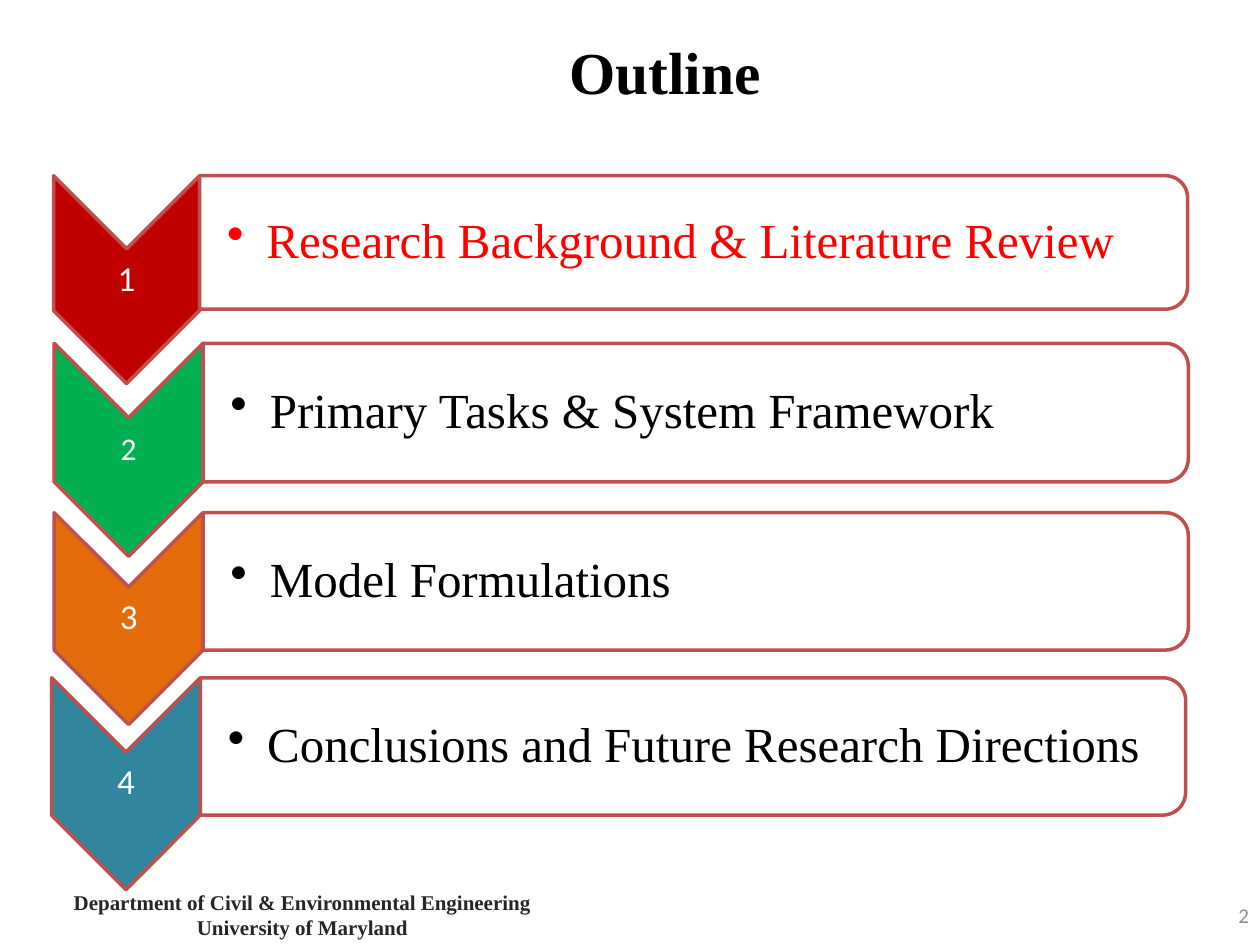
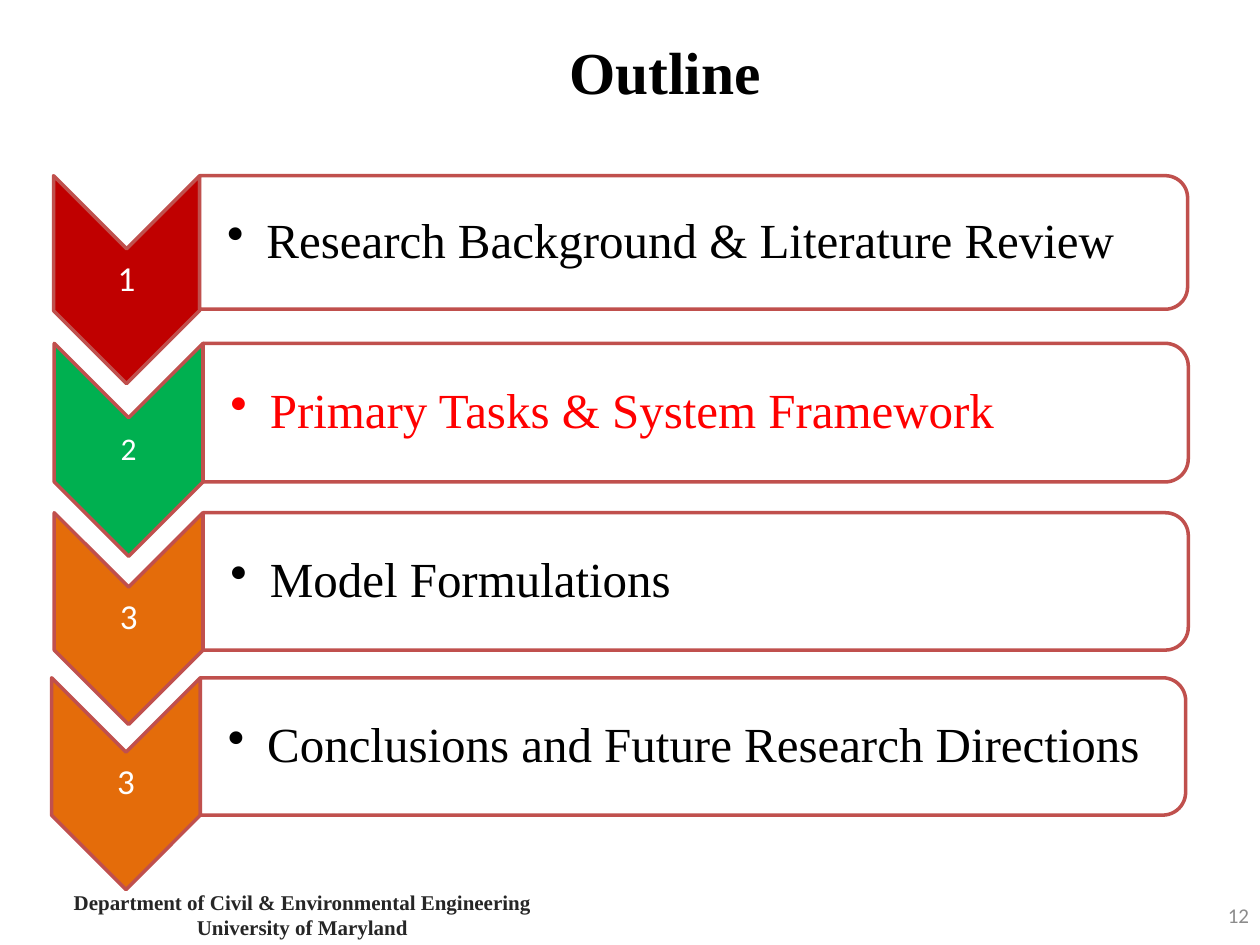
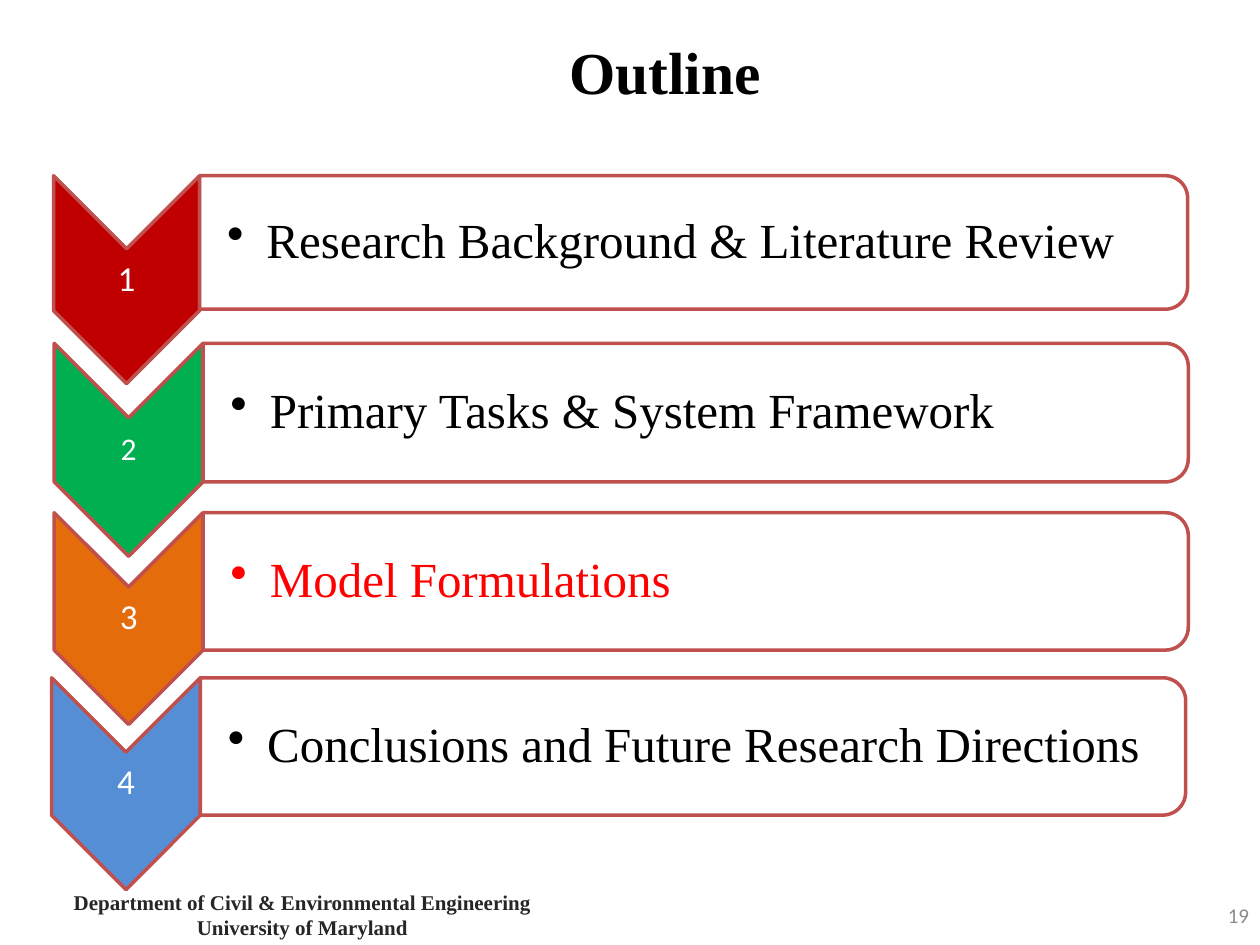
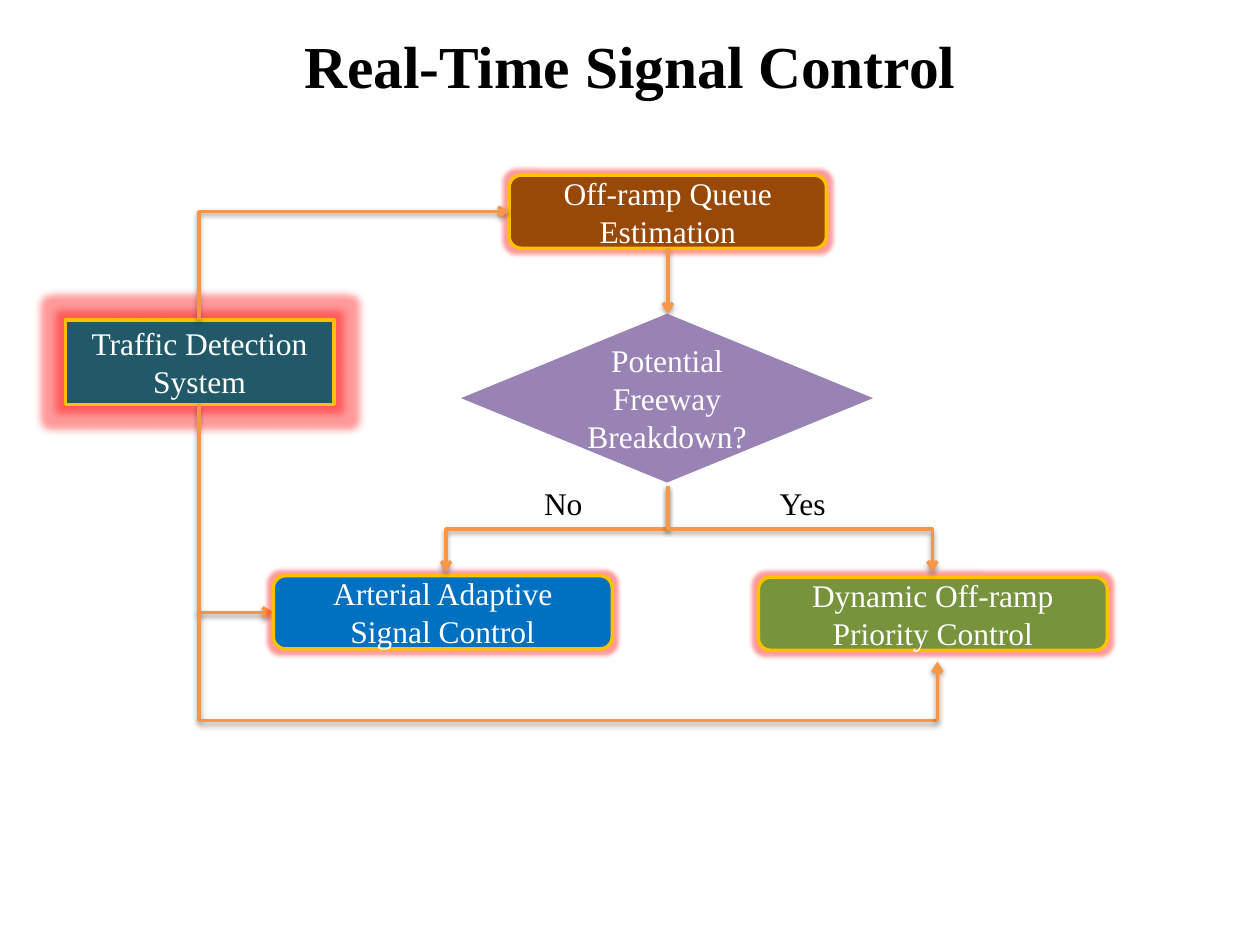
from collections import namedtuple

from lxml import etree
from pptx import Presentation
from pptx.dml.color import RGBColor
from pptx.enum.shapes import MSO_CONNECTOR as LINK, MSO_SHAPE as SHAPE
from pptx.enum.text import MSO_ANCHOR as ANCHOR, PP_ALIGN as ALIGN
from pptx.oxml.ns import qn
from pptx.util import Pt

COLORS = {
    "black": "000000", "white": "FFFFFF", "active": "FF0000",
    "footer": "262626", "number": "8C8C8C", "outline": "C0504D",
    "red": "C00000", "green": "00B050", "orange": "E46C0A",
    "teal": "31859C", "sky": "558ED5",
    "brown": "984807", "petrol": "215968", "purple": "8064A2",
    "blue": "0070C0", "olive": "77933C", "gold": "FFC000", "arrow": "F79646",
}
SERIF, SANS = "Times New Roman", "Calibri"

TITLE = {"name": SERIF, "size": Pt(34), "bold": True}
FOOTER = {"name": SERIF, "size": Pt(12), "bold": True}
PAGE_NUMBER = {"name": SANS, "size": Pt(12)}
TOPIC = {"name": SERIF, "size": Pt(28)}
FLOW = {"name": SERIF, "size": Pt(18)}

TOPICS = [
    "Research Background & Literature Review",
    "Primary Tasks & System Framework",
    "Model Formulations",
    "Conclusions and Future Research Directions",
]
Row = namedtuple("Row", "left top chevron_w chevron_h panel_w panel_h number_size")
ROWS = [
    Row(30.6, 100.4, 83.5, 118.8, 564.5, 76.3, 20),
    Row(31, 196.2, 85, 121.7, 563, 79.2, 18),
    Row(31, 293, 85, 121, 563, 78.5, 20),
    Row(29.5, 387.3, 85, 121, 563, 78.5, 20),
]
# Page number, highlighted topic, badge of the last row and its colour
OUTLINES = [(2, 0, "4", "teal"), (12, 1, "3", "orange"), (19, 2, "4", "sky")]


def rgb(color):
    return RGBColor.from_string(COLORS[color])


def apply(target, formats):
    for name, value in formats.items():
        setattr(target, name, value)


def add_xml(parent, tag, **attributes):
    return etree.SubElement(parent, qn(tag), {k: str(v) for k, v in attributes.items()})


def write(shape, text, font, color, align=ALIGN.CENTER, insets=(7.2, 3.6, 7.2, 3.6),
          spacing=None, bullet_indent=None, wrap=True, anchor=ANCHOR.MIDDLE):
    frame = shape.text_frame
    sides = ("margin_left", "margin_top", "margin_right", "margin_bottom")
    apply(frame, dict(zip(sides, map(Pt, insets))))
    apply(frame, {"word_wrap": wrap, "vertical_anchor": anchor, "text": text})
    for paragraph in frame.paragraphs:
        apply(paragraph, {"alignment": align, "line_spacing": spacing})
        if bullet_indent:
            properties = paragraph._p.get_or_add_pPr()
            properties.set("marL", str(Pt(bullet_indent)))
            properties.set("indent", str(-Pt(bullet_indent)))
            add_xml(properties, "a:buChar", char="•")
        apply(paragraph.font, font)
        paragraph.font.color.rgb = rgb(color)


def add_label(slide, box, text, font, color="black", **layout):
    write(slide.shapes.add_textbox(*map(Pt, box)), text, font, color, **layout)


def add_block(slide, kind, box, fill, line=None, opacity=100):
    block = slide.shapes.add_shape(kind, *map(Pt, box))
    block.shadow.inherit = False
    block.fill.solid()
    block.fill.fore_color.rgb = rgb(fill)
    if opacity < 100:
        fill_color = block._element.spPr.find(qn("a:solidFill"))[0]
        add_xml(fill_color, "a:alpha", val=opacity * 1000)
    if line:
        block.line.color.rgb = rgb(line)
        block.line.width = Pt(2)
    else:
        block.line.fill.background()
    return block


def add_turned_block(slide, kind, box, fill, opacity=100):
    """Add a block turned by 90 degrees that covers the given box."""
    left, top, width, height = box
    shift = (width - height) / 2
    block = add_block(slide, kind, (left + shift, top - shift, height, width),
                      fill, "outline", opacity)
    block.rotation = 90


def add_topic_row(slide, row, badge, badge_fill, topic, topic_color):
    add_turned_block(slide, SHAPE.CHEVRON,
                     (row.left, row.top, row.chevron_w, row.chevron_h), badge_fill)
    add_label(slide, (row.left, row.top + row.chevron_w / 2,
                      row.chevron_w, row.chevron_h - row.chevron_w),
              badge, {"name": SANS, "size": Pt(row.number_size)}, "white",
              insets=(0.9,) * 4, spacing=0.9)
    panel_left = row.left + row.chevron_w
    add_turned_block(slide, SHAPE.ROUND_2_SAME_RECTANGLE,
                     (panel_left, row.top, row.panel_w, row.panel_h), "white", 90)
    add_label(slide, (panel_left, row.top + 3.8, row.panel_w - 3.7, row.panel_h - 7.6),
              topic, TOPIC, topic_color, align=ALIGN.LEFT,
              insets=(15.7, 1.4, 1.4, 1.4), spacing=0.9, bullet_indent=22.5)


def add_outline_slide(slide, page, active, last_badge, last_fill):
    add_label(slide, (54, 3.6, 652.3, 74.2), "Outline", TITLE)
    add_label(slide, (31, 508.3, 283.7, 28.8),
              "Department of Civil & Environmental Engineering\nUniversity of Maryland",
              FOOTER, "footer")
    badges = ["1", "2", "3", last_badge]
    fills = ["red", "green", "orange", last_fill]
    for index, (row, badge, fill, topic) in enumerate(zip(ROWS, badges, fills, TOPICS)):
        add_topic_row(slide, row, badge, fill, topic,
                      "active" if index == active else "black")
    add_label(slide, (553, 508.3, 167.8, 28.8), str(page), PAGE_NUMBER, "number",
              align=ALIGN.RIGHT)


def add_step(slide, kind, box, text, fill, glow=5):
    step = add_block(slide, kind, box, fill, "gold")
    effects = step._element.spPr.find(qn("a:effectLst"))
    halo = add_xml(effects, "a:glow", rad=Pt(glow))
    add_xml(add_xml(halo, "a:srgbClr", val=COLORS["active"]), "a:alpha", val=40000)
    write(step, text, FLOW, "white")


def add_flow_line(slide, start, end, arrow=True, kind=LINK.STRAIGHT):
    line = slide.shapes.add_connector(kind, *map(Pt, start + end))
    line.line.color.rgb = rgb("arrow")
    line.line.width = Pt(2)
    if arrow:
        add_xml(line.line._get_or_add_ln(), "a:tailEnd", type="arrow")
    effects = add_xml(line._element.spPr, "a:effectLst")
    shadow = add_xml(effects, "a:outerShdw", blurRad=Pt(3.1), dist=Pt(1.6),
                     dir=5400000, rotWithShape=0)
    add_xml(add_xml(shadow, "a:srgbClr", val=COLORS["black"]), "a:alpha", val=38000)
    return line


def add_bent_arrow(slide, start, end, preset="bentConnector2"):
    """Add an elbow arrow that leaves its start vertically."""
    line = add_flow_line(slide, start, end, kind=LINK.ELBOW)
    (x1, y1), (x2, y2) = start, end
    width, height = abs(y2 - y1), abs(x2 - x1)
    apply(line, {"left": Pt((x1 + x2 - width) / 2), "top": Pt((y1 + y2 - height) / 2),
                 "width": Pt(width), "height": Pt(height)})
    rightward, upward = x2 > x1, y2 < y1
    turn = 270 if rightward and not upward else 90
    properties = line._element.spPr
    frame = properties.find(qn("a:xfrm"))
    frame.set("rot", str(turn * 60000))
    frame.set("flipH", str(int(rightward)))
    frame.set("flipV", str(int(upward)))
    properties.find(qn("a:prstGeom")).set("prst", preset)


def add_signal_control_slide(slide):
    detection_x, decision_x, priority_x = 113.8, 381.6, 535.7
    rail_y, adaptive_y, branch_y = 411.8, 349.9, 277.9

    add_label(slide, (36, -7.9, 648, 90), "Real-Time Signal Control", TITLE)
    add_step(slide, SHAPE.ROUNDED_RECTANGLE, (290.9, 100.1, 181.4, 41.8),
             "Off-ramp Queue Estimation", "brown")
    add_flow_line(slide, (decision_x, 141.8), (decision_x, 179.3))
    add_step(slide, SHAPE.RECTANGLE, (37.4, 182.9, 153.4, 48.2),
             "Traffic Detection System", "petrol", glow=9)
    add_bent_arrow(slide, (detection_x, 182.9), (290.9, 121))
    add_bent_arrow(slide, (detection_x, 231.1), (156.2, adaptive_y))
    decision = add_block(slide, SHAPE.DIAMOND, (263.5, 179.3, 235.4, 96.5),
                         "purple", opacity=80)
    write(decision, "Potential Freeway Breakdown?", FLOW, "white")
    add_step(slide, SHAPE.ROUNDED_RECTANGLE, (156.2, 329, 193.7, 41.8),
             "Arterial Adaptive Signal Control", "blue")
    add_step(slide, SHAPE.ROUNDED_RECTANGLE, (433.4, 329.8, 199.4, 41.8),
             "Dynamic Off-ramp Priority Control", "olive")
    for target_x in (254.9, 532.8):
        add_bent_arrow(slide, (decision_x, branch_y), (target_x, 326.9),
                       "bentConnector3")
    add_flow_line(slide, (detection_x, adaptive_y), (detection_x, rail_y), arrow=False)
    add_flow_line(slide, (detection_x, rail_y), (priority_x, rail_y), arrow=False)
    add_flow_line(slide, (priority_x, rail_y), (priority_x, 378))
    for answer, left, width in (("No", 303.8, 36.7), ("Yes", 438.5, 41)):
        add_label(slide, (left, 272.9, width, 28.8), answer, FLOW,
                  align=ALIGN.LEFT, wrap=False, anchor=ANCHOR.TOP)


def main():
    deck = Presentation()
    apply(deck, {"slide_width": Pt(720), "slide_height": Pt(540)})
    blank = deck.slide_layouts[6]
    for outline in OUTLINES:
        add_outline_slide(deck.slides.add_slide(blank), *outline)
    add_signal_control_slide(deck.slides.add_slide(blank))
    deck.save("out.pptx")


if __name__ == "__main__":
    main()
